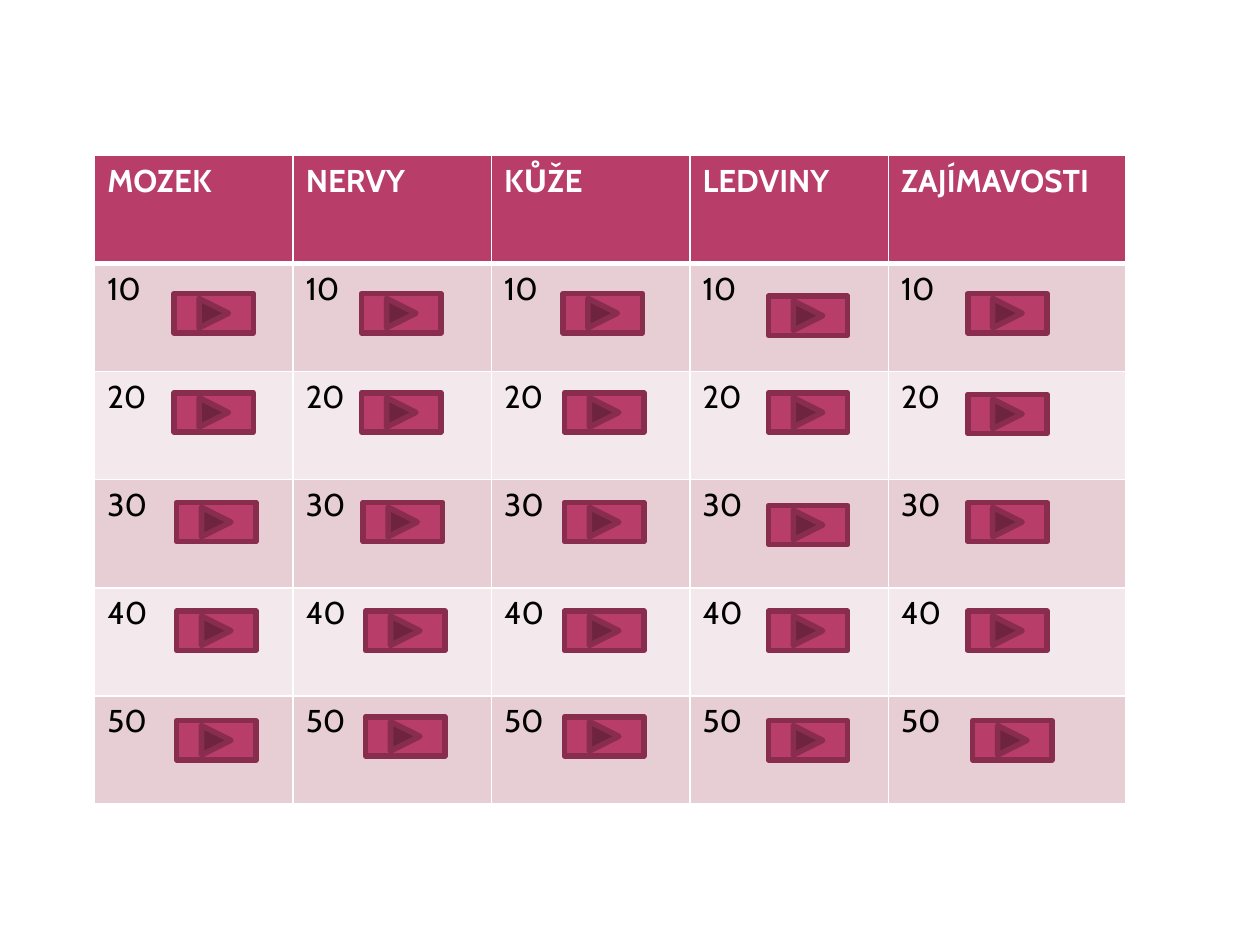
from lxml import etree
from pptx import Presentation
from pptx.dml.color import RGBColor as RGB
from pptx.enum.shapes import MSO_SHAPE as SHAPE
from pptx.oxml.ns import qn
from pptx.util import Cm, Pt

COLORS = {
    "header": "B83D68",
    "dark_band": "E6CED4",
    "light_band": "F3E8EB",
    "outline": "882D4D",
    "white": "FFFFFF",
    "black": "000000",
}
TOPICS = ["MOZEK", "NERVY", "KŮŽE", "LEDVINY", "ZAJÍMAVOSTI"]
POINTS = ["10", "20", "30", "40", "50"]
BUTTON_LEFTS = [
    [3.51, 3.51, 3.56, 3.56, 3.56],
    [7.29, 7.29, 7.32, 7.37, 7.37],
    [11.35, 11.38, 11.38, 11.38, 11.38],
    [15.49] * 5,
    [19.51, 19.51, 19.51, 19.51, 19.61],
]
BUTTON_TOPS = [
    [5.92, 7.92, 10.13, 12.32, 14.53],
    [5.92, 7.92, 10.13, 12.32, 14.45],
    [5.92, 7.92, 10.13, 12.32, 14.45],
    [5.97, 7.92, 10.19, 12.32, 14.53],
    [5.92, 7.95, 10.13, 12.32, 14.53],
]


def write(tf, text, size=18, color="black", bold=False, font="Cabin"):
    r = tf.paragraphs[0].add_run()
    r.text = text
    r.font.name = font
    r.font.size = Pt(size)
    r.font.bold = bold
    r.font.color.rgb = RGB.from_string(COLORS[color])


class Board:
    def __init__(self, slide):
        self.slide = slide

    def border(self, cell, side, width):
        ln = etree.SubElement(cell._tc.get_or_add_tcPr(), qn(f"a:ln{side}"), w=str(Pt(width)))
        fill = etree.SubElement(ln, qn("a:solidFill"))
        etree.SubElement(fill, qn("a:srgbClr"), val=COLORS["white"])

    def cell(self, cell, text, row):
        for side in "LRTB":
            thick = (row, side) in [(0, "B"), (1, "T")]
            self.border(cell, side, 3 if thick else 1)
        band = "header" if row == 0 else "dark_band" if row % 2 else "light_band"
        cell.fill.solid()
        cell.fill.fore_color.rgb = RGB.from_string(COLORS[band])
        write(cell.text_frame, text, color="black" if row else "white", bold=row == 0)

    def table(self, rows, left, top, widths, row_height):
        frame = self.slide.shapes.add_table(
            len(rows), len(widths), Cm(left), Cm(top),
            Cm(sum(widths)), Cm(row_height * len(rows)))
        table = frame.table
        table.horz_banding = False
        for col, width in zip(table.columns, widths):
            col.width = Cm(width)
        for i, texts in enumerate(rows):
            table.rows[i].height = Cm(row_height)
            for j, text in enumerate(texts):
                self.cell(table.cell(i, j), text, i)

    def button(self, left, top, width=1.6, height=0.79):
        sp = self.slide.shapes.add_shape(
            SHAPE.ACTION_BUTTON_FORWARD_OR_NEXT, Cm(left), Cm(top), Cm(width), Cm(height))
        sp.shadow.inherit = False
        sp.fill.solid()
        sp.fill.fore_color.rgb = RGB.from_string(COLORS["header"])
        sp.line.color.rgb = RGB.from_string(COLORS["outline"])
        sp.line.width = Pt(3.15)
        etree.SubElement(sp.line._get_or_add_ln(), qn("a:round"))


def main():
    prs = Presentation()
    prs.slide_width, prs.slide_height = Cm(25.4), Cm(19.05)
    board = Board(prs.slides.add_slide(prs.slide_layouts[6]))
    rows = [TOPICS] + [[points] * len(TOPICS) for points in POINTS]
    board.table(rows, 1.91, 3.13, [4.0] * 4 + [4.78], 2.18)
    for lefts, tops in zip(BUTTON_LEFTS, BUTTON_TOPS):
        for left, top in zip(lefts, tops):
            board.button(left, top)
    prs.save("out.pptx")


if __name__ == "__main__":
    main()
